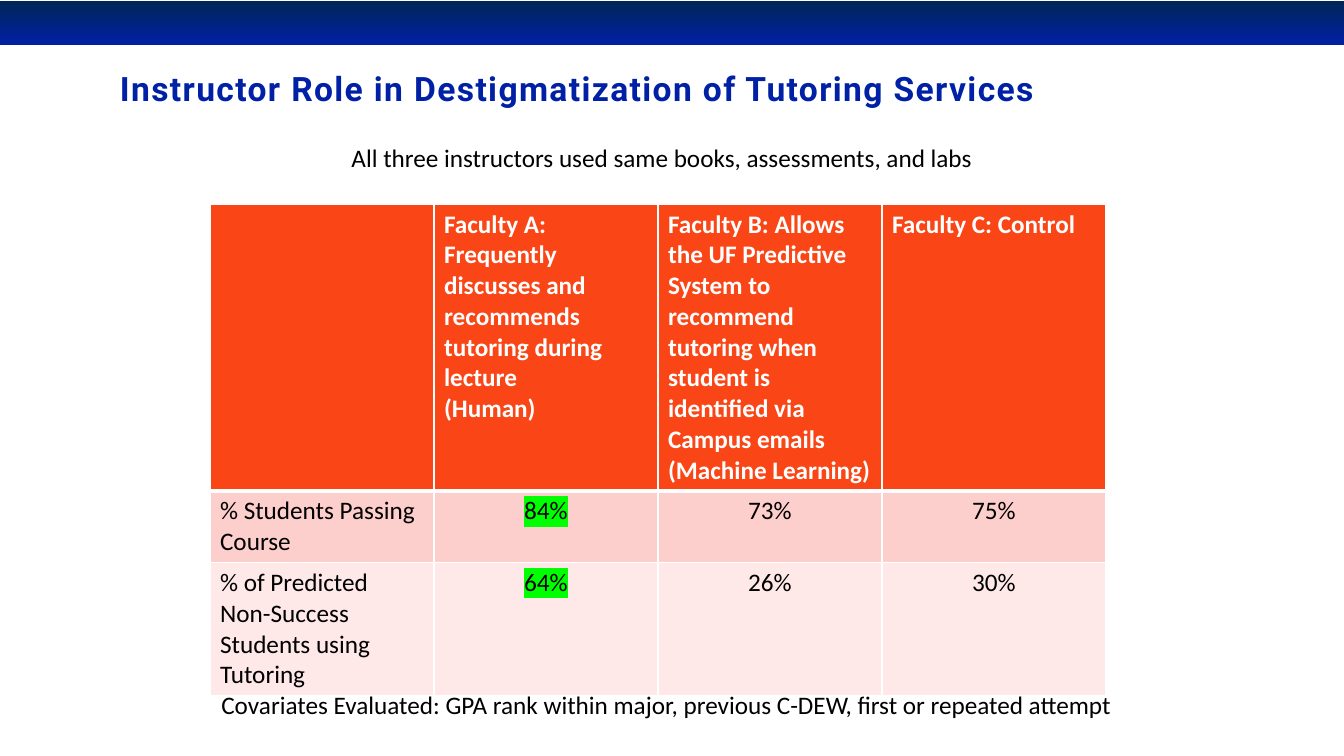
from lxml import etree
from pptx import Presentation
from pptx.dml.color import RGBColor
from pptx.enum.shapes import MSO_SHAPE
from pptx.enum.text import MSO_ANCHOR, MSO_AUTO_SIZE, PP_ALIGN
from pptx.oxml.ns import qn
from pptx.util import Pt

RECTANGLE = MSO_SHAPE.RECTANGLE
BOTTOM = MSO_ANCHOR.BOTTOM
NO_AUTOFIT, FIT_SHAPE = MSO_AUTO_SIZE.NONE, MSO_AUTO_SIZE.SHAPE_TO_FIT_TEXT
LEFT, CENTER = PP_ALIGN.LEFT, PP_ALIGN.CENTER

NAVY = RGBColor(0x00, 0x26, 0x57)
BLUE = RGBColor(0x00, 0x20, 0xA5)
ORANGE = RGBColor(0xFA, 0x46, 0x16)
PINK = RGBColor(0xFD, 0xCF, 0xCC)
PALE_PINK = RGBColor(0xFE, 0xE9, 0xE8)
GREEN = RGBColor(0x00, 0xFF, 0x00)
WHITE = RGBColor(0xFF, 0xFF, 0xFF)
BLACK = RGBColor(0x00, 0x00, 0x00)

ROWS = [
    ["",
     "Faculty A: Frequently discusses and recommends tutoring during lecture\n(Human)",
     "Faculty B: Allows the UF Predictive System to recommend tutoring when student"
     " is identified via Campus emails\n(Machine Learning)",
     "Faculty C: Control"],
    ["% Students Passing Course", "84%", "73%", "75%"],
    ["% of Predicted Non-Success Students using Tutoring", "64%", "26%", "30%"],
]
ROW_FILLS = [ORANGE, PINK, PALE_PINK]
ROW_HEIGHTS = [204, 51, 95]
HIGHLIGHTED = {"84%", "64%"}


def style_font(font, name, size, color, bold=False):
    """Set the look of a font."""
    font.name = name
    font.size = Pt(size)
    font.bold = bold
    font.color.rgb = color


def add_solid(parent, color):
    """Append a solid fill element to an XML parent."""
    fill = etree.SubElement(parent, qn("a:solidFill"))
    etree.SubElement(fill, qn("a:srgbClr"), val=str(color))


def add_band(slide, left, top, width, height):
    """Draw the gradient band across the top of the slide."""
    band = slide.shapes.add_shape(RECTANGLE, Pt(left), Pt(top), Pt(width), Pt(height))
    band.shadow.inherit = False
    band.line.fill.background()
    band.fill.gradient()
    band.fill.gradient_angle = 270
    for stop, color, position in zip(band.fill.gradient_stops, (NAVY, BLUE), (0, 1)):
        stop.color.rgb = color
        stop.position = position


def add_title(slide, text, left, top, width, height):
    """Place and format the title placeholder."""
    title = slide.shapes.title
    title.left, title.top, title.width, title.height = map(Pt, (left, top, width, height))
    frame = title.text_frame
    frame.text = text
    frame.auto_size = NO_AUTOFIT
    frame.vertical_anchor = BOTTOM
    frame.margin_left = frame.margin_top = frame.margin_right = frame.margin_bottom = 0
    paragraph = frame.paragraphs[0]
    paragraph.alignment = LEFT
    paragraph.line_spacing = 0.9
    style_font(paragraph.font, "Roboto", 24, BLUE, True)
    paragraph.runs[0].font._element.set("spc", "100")


def add_note(slide, text, left, top, width, height):
    """Add a single line of body text."""
    box = slide.shapes.add_textbox(Pt(left), Pt(top), Pt(width), Pt(height))
    frame = box.text_frame
    frame.text = text
    frame.word_wrap = False
    frame.auto_size = FIT_SHAPE
    style_font(frame.paragraphs[0].font, "Calibri", 18, BLACK)


def set_borders(cell, top, bottom):
    """Give a cell white borders with the stated top and bottom widths."""
    properties = cell._tc.get_or_add_tcPr()
    widths = {"a:lnL": 1, "a:lnR": 1, "a:lnT": top, "a:lnB": bottom}
    for position, (tag, width) in enumerate(widths.items()):
        line = etree.Element(qn(tag), w=str(Pt(width)))
        add_solid(line, WHITE)
        properties.insert(position, line)


def highlight(run, color):
    """Mark a run with a background colour."""
    mark = etree.SubElement(run._r.get_or_add_rPr(), qn("a:highlight"))
    etree.SubElement(mark, qn("a:srgbClr"), val=str(color))


def fill_cell(cell, text, row, column):
    """Write and format one cell of the results table."""
    header = row == 0
    cell.text = text
    cell.fill.solid()
    cell.fill.fore_color.rgb = ROW_FILLS[row]
    set_borders(cell, 3 if row == 1 else 1, 3 if header else 1)
    for paragraph in cell.text_frame.paragraphs:
        paragraph.alignment = LEFT if header or column == 0 else CENTER
        style_font(paragraph.font, "Calibri", 18, WHITE if header else BLACK, header)
        if text in HIGHLIGHTED:
            highlight(paragraph.runs[0], GREEN)


def add_results(slide, left, top, width):
    """Add the table comparing the three instructors."""
    columns = len(ROWS[0])
    frame = slide.shapes.add_table(len(ROWS), columns, Pt(left), Pt(top),
                                   Pt(width), Pt(sum(ROW_HEIGHTS)))
    table = frame.table
    for column in table.columns:
        column.width = Pt(width / columns)
    for row, texts in enumerate(ROWS):
        table.rows[row].height = Pt(ROW_HEIGHTS[row])
        for column, text in enumerate(texts):
            fill_cell(table.cell(row, column), text, row, column)


def main():
    """Build and save the presentation."""
    presentation = Presentation()
    presentation.slide_width, presentation.slide_height = Pt(960), Pt(540)
    slide = presentation.slides.add_slide(presentation.slide_layouts[5])
    add_band(slide, 0, 0.5, 960, 31.5)
    add_title(slide, "Instructor Role in Destigmatization of Tutoring Services",
              85.7, 21, 854, 56.7)
    add_results(slide, 150, 145.7, 640)
    add_note(slide, "Covariates Evaluated: GPA rank within major, previous C-DEW, "
             "first or repeated attempt", 151, 489, 658, 29)
    add_note(slide, "All three instructors used same books, assessments, and labs",
             244, 98, 463, 29)
    presentation.save("out.pptx")


if __name__ == "__main__":
    main()
